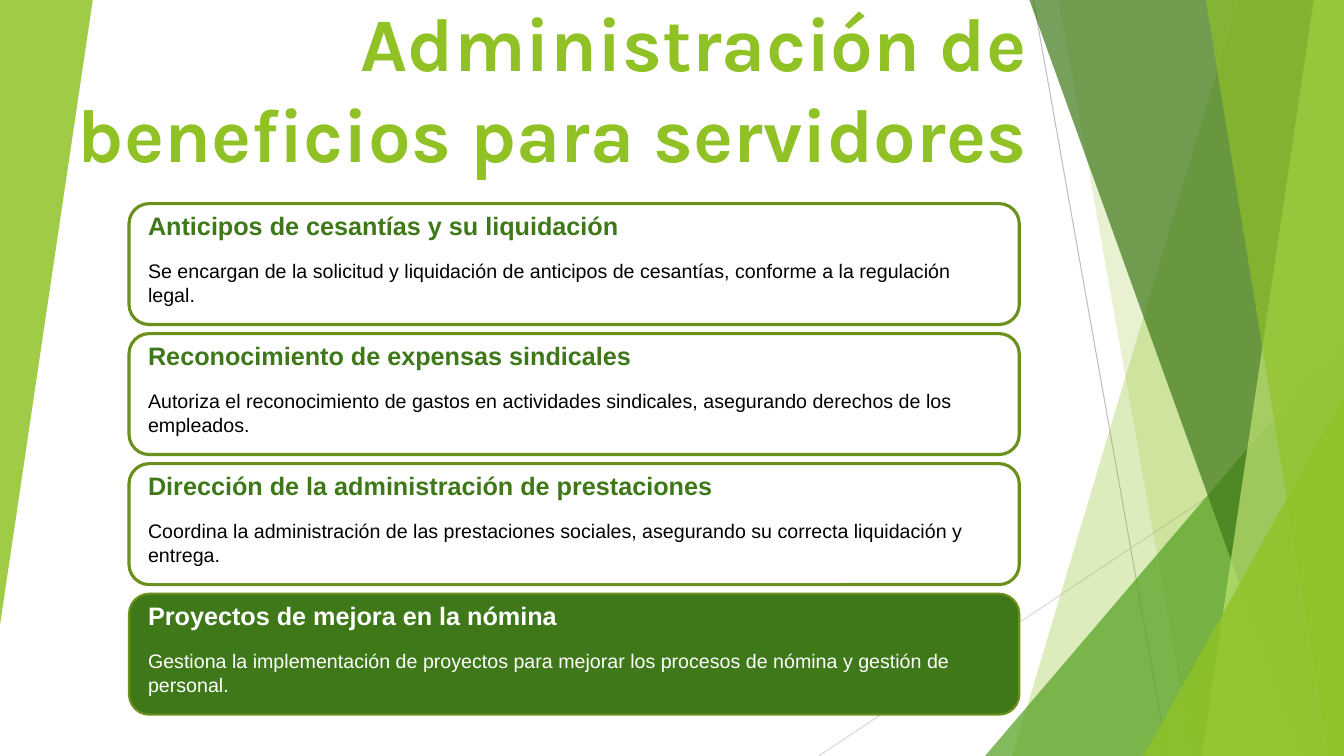
from lxml import etree
from pptx import Presentation
from pptx.dml.color import RGBColor
from pptx.enum.shapes import MSO_CONNECTOR, MSO_SHAPE
from pptx.enum.text import MSO_ANCHOR, PP_ALIGN
from pptx.oxml.ns import qn
from pptx.util import Inches, Pt

STRAIGHT = MSO_CONNECTOR.STRAIGHT
TRIANGLE = MSO_SHAPE.ISOSCELES_TRIANGLE
ROUNDED = MSO_SHAPE.ROUNDED_RECTANGLE
BOTTOM, TOP = MSO_ANCHOR.BOTTOM, MSO_ANCHOR.TOP
LEFT, RIGHT = PP_ALIGN.LEFT, PP_ALIGN.RIGHT

WIDTH, HEIGHT = 13.33, 7.5
LIME, LEAF, DARK, PALE = "90C226", "54A021", "3F7819", "C0E474"
EDGE, WHITE, BLACK = "6B901C", "FFFFFF", "000000"

CARDS = [
    ("Anticipos de cesantías y su liquidación",
     "Se encargan de la solicitud y liquidación de anticipos de cesantías, "
     "conforme a la regulación legal."),
    ("Reconocimiento de expensas sindicales",
     "Autoriza el reconocimiento de gastos en actividades sindicales, "
     "asegurando derechos de los empleados."),
    ("Dirección de la administración de prestaciones",
     "Coordina la administración de las prestaciones sociales, "
     "asegurando su correcta liquidación y entrega."),
    ("Proyectos de mejora en la nómina",
     "Gestiona la implementación de proyectos para mejorar los procesos "
     "de nómina y gestión de personal."),
]
CARD_TOP, CARD_STEP = 2.02, 1.29


def color(text):
    return RGBColor.from_string(text)


def tint(shape, shade, alpha):
    shape.shadow.inherit = False
    shape.line.fill.background()
    shape.fill.solid()
    shape.fill.fore_color.rgb = color(shade)
    mark = shape.fill._xPr.find(".//" + qn("a:srgbClr"))
    etree.SubElement(mark, qn("a:alpha")).set("val", str(alpha * 1000))


def add_line(slide, ends, shade):
    line = slide.shapes.add_connector(STRAIGHT, *map(Inches, ends))
    line.line.color.rgb = color(shade)
    line.line.width = Pt(0.75)
    etree.SubElement(line._element.spPr, qn("a:effectLst"))


def add_band(slide, top, base, shade, alpha, right=True):
    points = [(top, 0), (WIDTH, 0), (WIDTH, HEIGHT), (base, HEIGHT)]
    points = [(Inches(x), Inches(y)) for x, y in points]
    path = slide.shapes.build_freeform(*points[0])
    path.add_line_segments(points[1:], close=True)
    tint(path.convert_to_shape(), shade, alpha)


def add_wedge(slide, box, shade, alpha, turn=0):
    wedge = slide.shapes.add_shape(TRIANGLE, *map(Inches, box))
    wedge.adjustments[0] = 1
    wedge.rotation = turn
    tint(wedge, shade, alpha)


def add_text(slide, box, text, size, shade, font="Arial", bold=False,
             align=LEFT, anchor=TOP):
    frame = slide.shapes.add_textbox(*map(Inches, box)).text_frame
    frame.word_wrap = True
    frame.vertical_anchor = anchor
    line = frame.paragraphs[0]
    line.text = text
    line.alignment = align
    line.font.name = font
    line.font.size = Pt(size)
    line.font.bold = bold
    line.font.color.rgb = color(shade)


def add_card(slide, top, head, body, solid):
    card = slide.shapes.add_shape(ROUNDED, *map(Inches, (1.28, top, 8.83, 1.2)))
    card.shadow.inherit = False
    card.line.color.rgb = color(EDGE)
    card.line.width = Pt(1.5 if solid else 2.25)
    if solid:
        card.fill.solid()
        card.fill.fore_color.rgb = color(DARK)
    else:
        card.fill.background()
    add_text(slide, (1.37, top + 0.02, 8.65, 0.4), head, 18,
             WHITE if solid else DARK, bold=True)
    add_text(slide, (1.37, top + 0.5, 8.65, 0.57), body, 14,
             WHITE if solid else BLACK)


def add_decor(slide):
    add_line(slide, (10.25, 0, 11.58, HEIGHT), "BFBFBF")
    add_line(slide, (WIDTH, 4.03, 8.12, HEIGHT), "D9D9D9")
    add_band(slide, 12.28, 10.04, LIME, 30)
    add_band(slide, 10.5, 11.83, LIME, 20)
    add_wedge(slide, (9.77, 3.33, 3.56, 4.17), LEAF, 72)
    add_band(slide, 10.21, 12.91, DARK, 70)
    add_band(slide, 13.03, 11.92, PALE, 70)
    add_band(slide, 11.96, 13.18, LIME, 65)
    add_wedge(slide, (11.34, 3.93, 1.99, 3.57), LIME, 80)
    add_wedge(slide, (0, 0, 0.92, 6.2), LIME, 85, turn=180)


def main():
    deck = Presentation()
    deck.slide_width, deck.slide_height = Inches(WIDTH), Inches(HEIGHT)
    slide = deck.slides.add_slide(deck.slide_layouts[6])
    add_decor(slide)
    add_text(slide, (0.39, 0.01, 9.89, 1.8),
             "Administración de beneficios para servidores", 54, LIME,
             font="Karla", bold=True, align=RIGHT, anchor=BOTTOM)
    last = len(CARDS) - 1
    for index, (head, body) in enumerate(CARDS):
        add_card(slide, CARD_TOP + index * CARD_STEP, head, body, index == last)
    deck.save("out.pptx")


if __name__ == "__main__":
    main()
